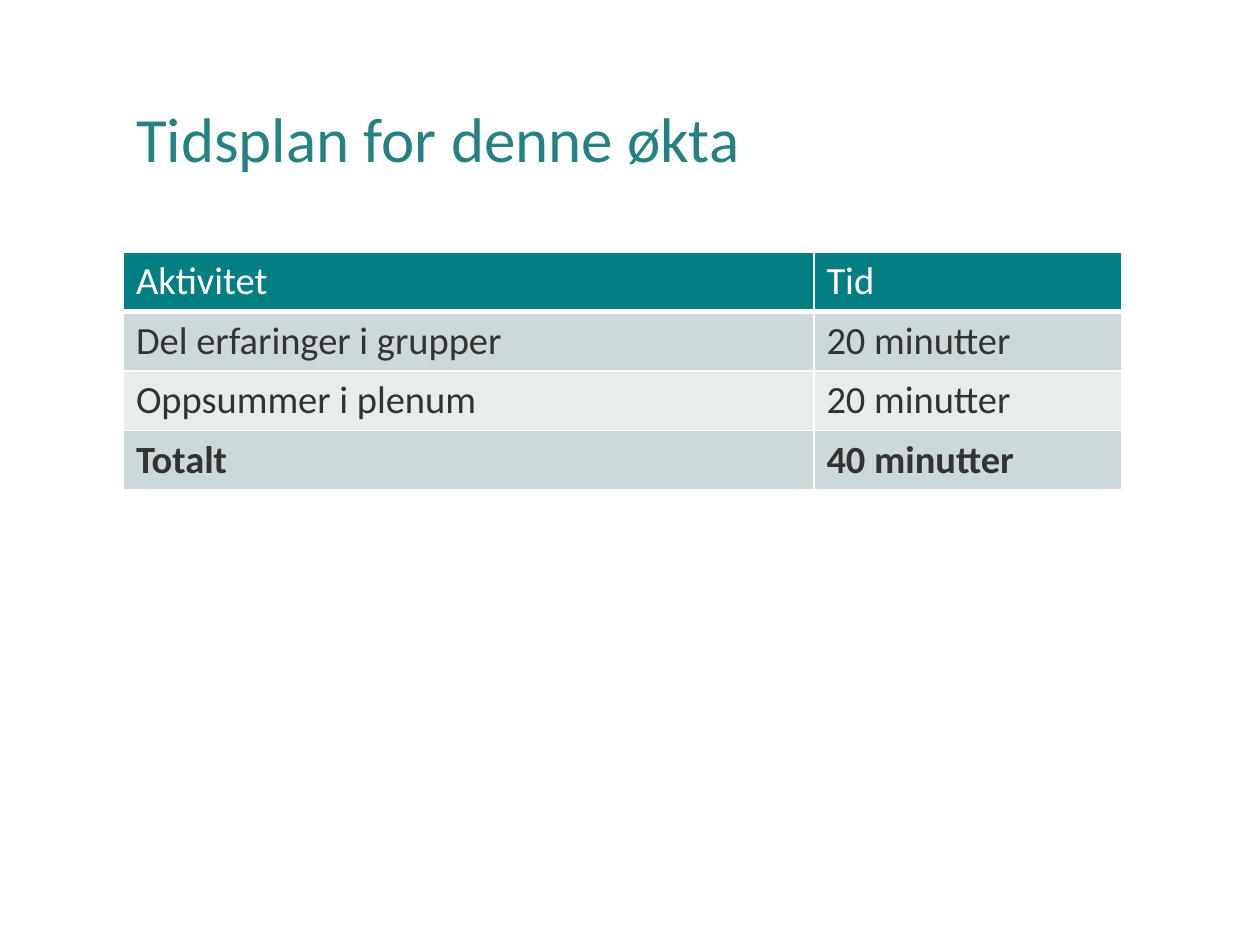
from lxml import etree
from pptx import Presentation
from pptx.dml.color import RGBColor
from pptx.enum.text import MSO_ANCHOR, PP_ALIGN
from pptx.oxml.ns import qn
from pptx.util import Inches, Pt

MIDDLE, TOP = MSO_ANCHOR.MIDDLE, MSO_ANCHOR.TOP
LEFT = PP_ALIGN.LEFT

TITLE_TEAL = RGBColor(0x26, 0x81, 0x83)
HEADER_TEAL = RGBColor(0x03, 0x7F, 0x83)
DARK_BAND = RGBColor(0xCC, 0xD8, 0xD9)
LIGHT_BAND = RGBColor(0xE7, 0xEC, 0xED)
INK = RGBColor(0x33, 0x33, 0x33)
WHITE = RGBColor(0xFF, 0xFF, 0xFF)

FONT = "Calibri"
MARGIN = 0.98
COLUMN_WIDTHS = (5.48, 2.44)
ROW_HEIGHT = 0.47
SCHEDULE = (
    ("Aktivitet", "Tid"),
    ("Del erfaringer i grupper", "20 minutter"),
    ("Oppsummer i plenum", "20 minutter"),
    ("Totalt", "40 minutter"),
)


def write(frame, text, *, size, color, bold=False, spacing=1.0):
    """Put one formatted, left-aligned paragraph in a text frame."""
    frame.text = text
    paragraph = frame.paragraphs[0]
    paragraph.alignment = LEFT
    paragraph.line_spacing = spacing
    font = paragraph.runs[0].font
    font.name, font.size, font.bold = FONT, Pt(size), bold
    font.color.rgb = color


def add_borders(cell, **widths):
    """Draw white cell borders, with widths in points keyed by side."""
    properties = cell._tc.get_or_add_tcPr()
    for side, width in widths.items():
        line = etree.SubElement(properties, qn(f"a:ln{side}"), w=str(Pt(width)))
        fill = etree.SubElement(line, qn("a:solidFill"))
        etree.SubElement(fill, qn("a:srgbClr"), val=str(WHITE))


def add_title(slide, text):
    """Place and format the slide title."""
    title = slide.shapes.title
    title.left, title.top = Inches(MARGIN), Inches(0.4)
    title.width, title.height = Inches(8.29), Inches(1.45)
    write(title.text_frame, text, size=36, color=TITLE_TEAL, spacing=0.9)
    title.text_frame.vertical_anchor = MIDDLE


def add_schedule(slide, rows):
    """Add the banded table with a header row and a bold total row."""
    table = slide.shapes.add_table(
        len(rows), len(COLUMN_WIDTHS), Inches(MARGIN), Inches(2),
        Inches(sum(COLUMN_WIDTHS)), Inches(ROW_HEIGHT * len(rows)),
    ).table
    for column, width in zip(table.columns, COLUMN_WIDTHS):
        column.width = Inches(width)
    last = len(rows) - 1
    for r, texts in enumerate(rows):
        header = r == 0
        band = HEADER_TEAL if header else DARK_BAND if r % 2 else LIGHT_BAND
        for c, text in enumerate(texts):
            cell = table.cell(r, c)
            write(cell.text_frame, text, size=22,
                  color=WHITE if header else INK, bold=r == last)
            cell.vertical_anchor = TOP
            add_borders(cell, L=1, R=1, T=3 if r == 1 else 1, B=3 if header else 1)
            cell.fill.solid()
            cell.fill.fore_color.rgb = band


def main():
    """Build the session timetable slide."""
    deck = Presentation()
    deck.slide_width, deck.slide_height = Inches(10), Inches(7.5)
    slide = deck.slides.add_slide(deck.slide_layouts[5])
    add_title(slide, "Tidsplan for denne økta")
    add_schedule(slide, SCHEDULE)
    deck.save("out.pptx")


if __name__ == "__main__":
    main()
